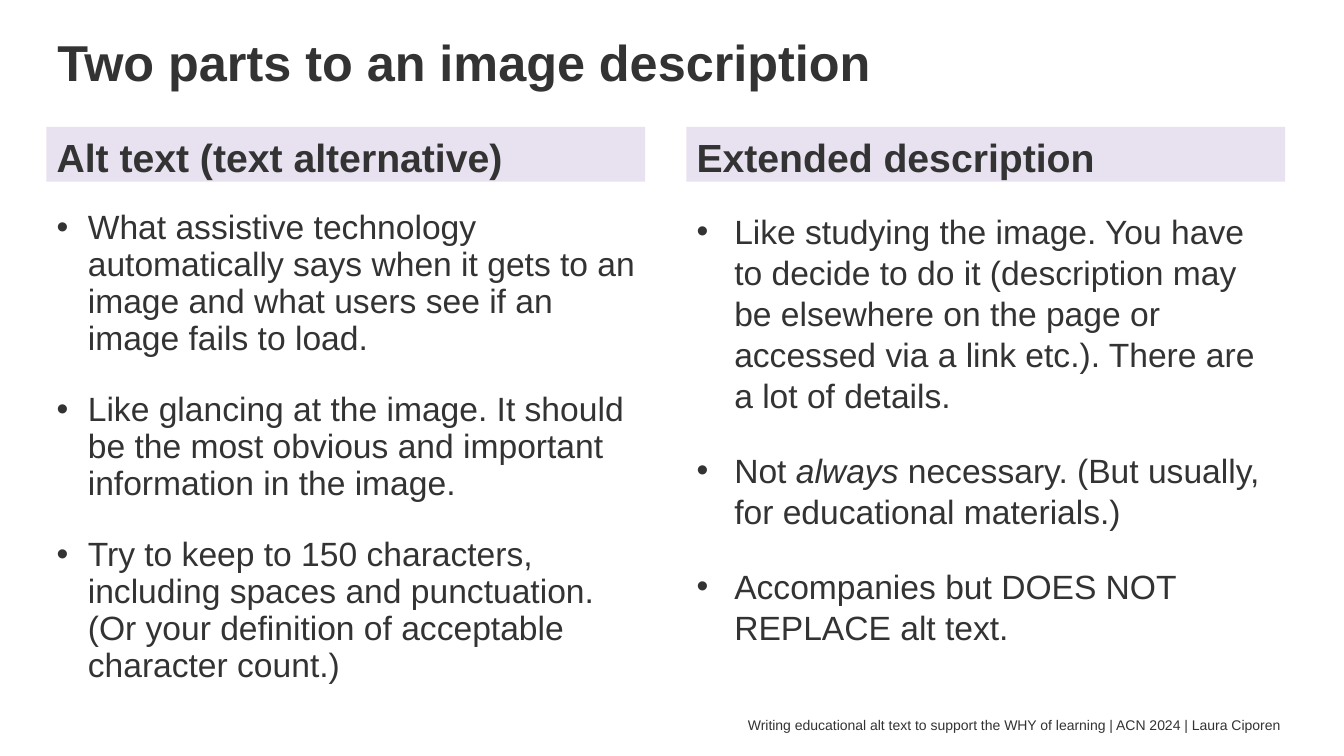
from lxml.etree import SubElement
from pptx import Presentation
from pptx.dml.color import RGBColor
from pptx.enum.text import MSO_ANCHOR as ANCHOR, MSO_AUTO_SIZE as AUTO, PP_ALIGN as ALIGN
from pptx.oxml.ns import qn
from pptx.util import Cm, Pt

INK = RGBColor(0x33, 0x33, 0x33)
PURPLE = RGBColor(0x44, 0x0B, 0x7F)
LEFT, RIGHT, COL_W = 1.17, 17.3, 15.09


def place(sp, x, y, w, h, anchor):
    sp.left, sp.top, sp.width, sp.height = Cm(x), Cm(y), Cm(w), Cm(h)
    tf = sp.text_frame
    tf.word_wrap = True
    tf.auto_size = AUTO.NONE
    tf.vertical_anchor = anchor
    return tf


def write(p, runs, size, bold=False, spacing=1.02, before=0, after=0):
    p.line_spacing = spacing
    p.space_before, p.space_after = Pt(before), Pt(after)
    for text, italic in runs:
        r = p.add_run()
        r.text = text
        r.font.name, r.font.size = "Arial", Pt(size)
        r.font.bold, r.font.italic = bold, italic
        r.font.color.rgb = INK


prs = Presentation()
prs.slide_width, prs.slide_height = Cm(33.87), Cm(19.05)
slide = prs.slides.add_slide(prs.slide_layouts.get_by_name("Comparison"))
ph = slide.placeholders

# Title
tf = place(slide.shapes.title, 1.19, 0.64, 31.19, 1.8, ANCHOR.MIDDLE)
p = tf.paragraphs[0]
p.alignment = ALIGN.LEFT
write(p, [("Two parts to an image description", False)], 36, bold=True)

# Two columns: heading, left edge, bullet indent, line spacing, bullets
columns = [
    ("Alt text (text alternative)", LEFT, 0.79, 0.92, [
        [("What assistive technology automatically says when it gets to an image "
          "and what users see if an image fails to load.", False)],
        [("Like glancing at the image. It should be the most obvious and "
          "important information in the image.", False)],
        [("Try to keep to 150 characters, including spaces and punctuation. "
          "(Or your definition of acceptable character count.)", False)],
    ]),
    ("Extended description", RIGHT, 0.95, 1.02, [
        [("Like studying the image. You have to decide to do it (description may "
          "be elsewhere on the page or accessed via a link etc.). "
          "There are a lot of details.", False)],
        [("Not ", False), ("always", True),
         (" necessary. (But usually, for educational materials.)", False)],
        [("Accompanies but DOES NOT REPLACE alt text.", False)],
    ]),
]
for i, (heading, x, indent, spacing, bullets) in enumerate(columns):
    # Heading on a pale purple band
    head, body = ph[1 + 2 * i], ph[2 + 2 * i]
    tf = place(head, x, 3.2, COL_W, 1.38, ANCHOR.TOP)
    head.fill.solid()
    head.fill.fore_color.rgb = PURPLE
    color = head.fill._xPr.find(qn("a:solidFill"))[0]
    SubElement(color, qn("a:alpha"), val="12000")
    write(tf.paragraphs[0], [(heading, False)], 28, bold=True, before=10, after=14)

    # Bulleted list
    tf = place(body, x, 5.16, COL_W, 12.09, ANCHOR.TOP)
    for n, runs in enumerate(bullets):
        p = tf.add_paragraph() if n else tf.paragraphs[0]
        write(p, runs, 24, spacing=spacing, before=10, after=14)
        pPr = p._p.get_or_add_pPr()
        pPr.set("marL", str(Cm(indent)))
        pPr.set("indent", str(-Cm(indent)))
        SubElement(pPr, qn("a:buFont"), typeface="Arial")
        SubElement(pPr, qn("a:buChar"), char="•")

# Footer line
sp = slide.shapes.add_textbox(0, 0, Cm(1), Cm(1))
tf = place(sp, 1.17, 17.93, 31.22, 0.69, ANCHOR.MIDDLE)
tf.margin_left = tf.margin_right = tf.margin_top = tf.margin_bottom = Cm(0.13)
p = tf.paragraphs[0]
p.alignment = ALIGN.RIGHT
write(p, [("Writing educational alt text to support the WHY of learning"
           " | ACN 2024 | Laura Ciporen", False)], 10)

prs.save("out.pptx")
